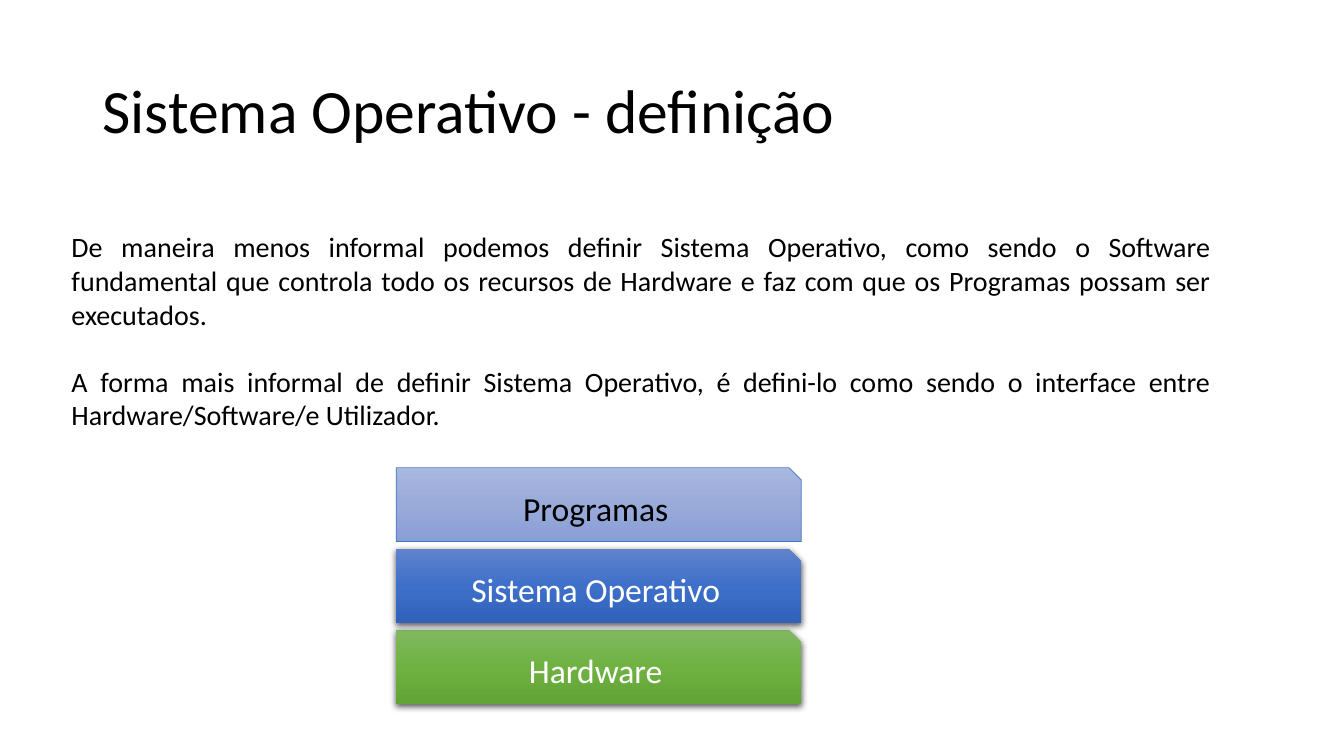
from copy import deepcopy

from lxml.etree import SubElement
from pptx import Presentation
from pptx.dml.color import RGBColor
from pptx.enum.shapes import MSO_SHAPE
from pptx.enum.text import MSO_ANCHOR, MSO_AUTO_SIZE, PP_ALIGN
from pptx.oxml.ns import qn
from pptx.util import Pt

FONT = "Calibri"
BLACK, WHITE = "000000", "FFFFFF"

DEFINITIONS = [
    "De maneira menos informal podemos definir Sistema Operativo, como sendo "
    "o Software fundamental que controla todo os recursos de Hardware e faz "
    "com que os Programas possam ser executados.",
    "A forma mais informal de definir Sistema Operativo, é defini-lo como "
    "sendo o interface entre Hardware/Software/e Utilizador.",
]

# Layers from bottom to top: label, gradient, text colour, outline
LAYERS = [
    ("Hardware", ("81B861", "6FB242", "62A336"), WHITE, None),
    ("Sistema Operativo", ("6183CB", "3E70CA", "3062BB"), WHITE, None),
    ("Programas", ("A8B7DF", "9AABD9", "889ED7"), BLACK, "4472C4"),
]
LAYER_LEFT, LAYER_WIDTH, LAYER_HEIGHT = 283, 289.4, 52.8
BOTTOM_LAYER_TOP, LAYER_PITCH = 450, 58


def color(hex_value):
    return RGBColor.from_string(hex_value)


def format_paragraph(paragraph, size, text_color, align):
    paragraph.alignment = align
    paragraph.font.name = FONT
    paragraph.font.size = Pt(size)
    paragraph.font.color.rgb = color(text_color)


def set_title(slide, text):
    title = slide.shapes.title
    title.left, title.top = Pt(66), Pt(28.75)
    title.width, title.height = Pt(828), Pt(104.4)
    frame = title.text_frame
    frame.text = text
    frame.auto_size = MSO_AUTO_SIZE.NONE
    frame.vertical_anchor = MSO_ANCHOR.MIDDLE
    heading = frame.paragraphs[0]
    heading.line_spacing = 0.9
    format_paragraph(heading, 44, BLACK, PP_ALIGN.LEFT)


def add_definitions(slide, texts):
    box = slide.shapes.add_textbox(Pt(44), Pt(160.6), Pt(828), Pt(152.6))
    frame = box.text_frame
    frame.word_wrap = True
    frame.auto_size = MSO_AUTO_SIZE.SHAPE_TO_FIT_TEXT
    frame.text = "\n".join(texts)
    for index, definition in enumerate(frame.paragraphs):
        format_paragraph(definition, 20, BLACK, PP_ALIGN.JUSTIFY)
        definition.space_before = Pt(24 if index else 0)


def fill_gradient(shape, shades):
    shape.fill.gradient()
    shape.fill.gradient_angle = 270
    # The default gradient has two stops; add the middle one
    stop_list = shape.element.spPr.find(".//" + qn("a:gsLst"))
    stop_list.insert(1, deepcopy(stop_list[0]))
    for index, (stop, shade) in enumerate(zip(shape.fill.gradient_stops, shades)):
        stop.position = index / 2
        stop.color.rgb = color(shade)


def add_drop_shadow(shape):
    effects = shape.element.spPr.find(qn("a:effectLst"))
    shadow = SubElement(effects, qn("a:outerShdw"), blurRad=str(Pt(4.5)),
                        dist=str(Pt(1.5)), dir="5400000", algn="ctr",
                        rotWithShape="0")
    tint = SubElement(shadow, qn("a:srgbClr"), val=BLACK)
    SubElement(tint, qn("a:alpha"), val="63000")


def add_layer(slide, top, label, shades, text_color, outline):
    layer = slide.shapes.add_shape(
        MSO_SHAPE.SNIP_1_RECTANGLE,
        Pt(LAYER_LEFT), Pt(top), Pt(LAYER_WIDTH), Pt(LAYER_HEIGHT))
    fill_gradient(layer, shades)
    layer.shadow.inherit = False
    if outline:
        layer.line.color.rgb = color(outline)
        layer.line.width = Pt(0.5)
    else:
        layer.line.fill.background()
        add_drop_shadow(layer)
    frame = layer.text_frame
    frame.text = label
    frame.vertical_anchor = MSO_ANCHOR.MIDDLE
    format_paragraph(frame.paragraphs[0], 24, text_color, PP_ALIGN.CENTER)


def main():
    presentation = Presentation()
    presentation.slide_width, presentation.slide_height = Pt(960), Pt(540)
    slide = presentation.slides.add_slide(presentation.slide_layouts[5])

    # Heading and definitions
    set_title(slide, "Sistema Operativo - definição")
    add_definitions(slide, DEFINITIONS)

    # Stack of system layers
    for level, layer in enumerate(LAYERS):
        add_layer(slide, BOTTOM_LAYER_TOP - level * LAYER_PITCH, *layer)

    presentation.save("out.pptx")


if __name__ == "__main__":
    main()
